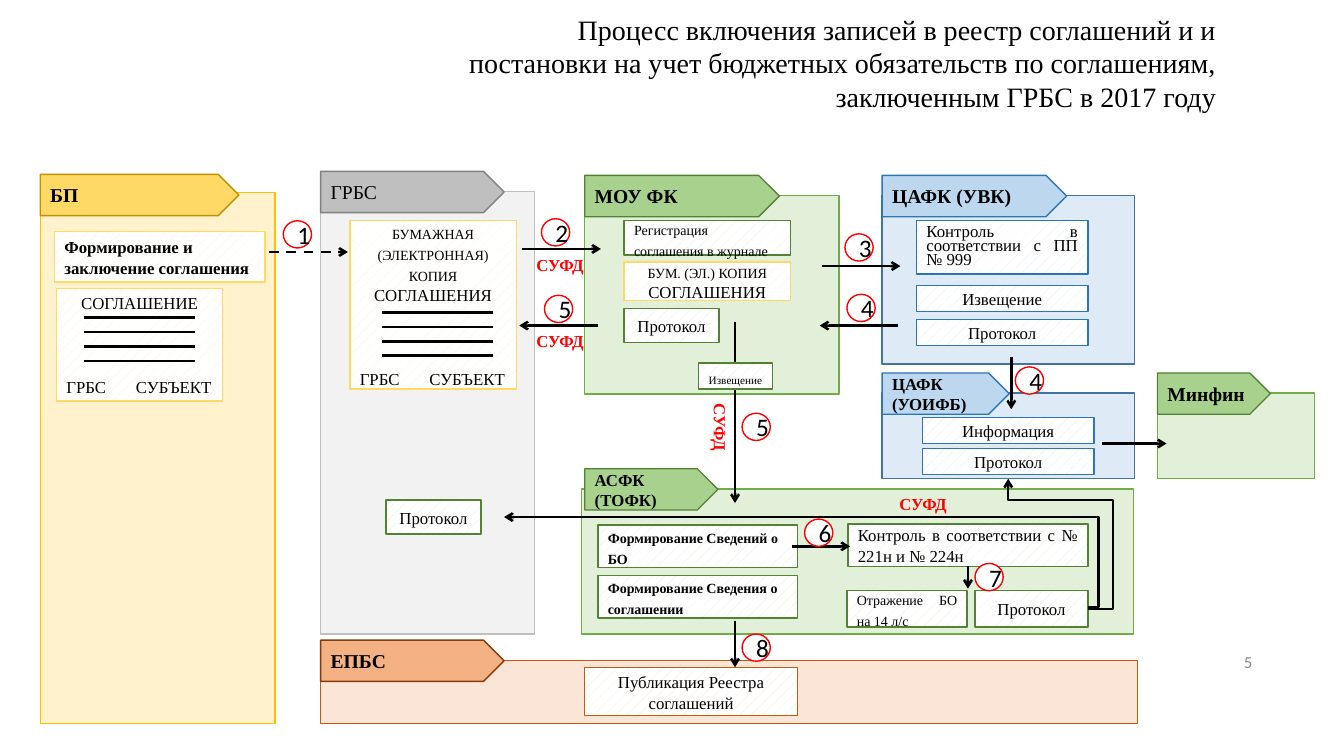
from lxml import etree
from pptx import Presentation
from pptx import util as u
from pptx.dml.color import RGBColor
from pptx.enum import dml, shapes, text
from pptx.oxml.ns import qn

SERIF = "Times New Roman"
LEFT, MID, RIGHT, FULL = (text.PP_ALIGN.LEFT, text.PP_ALIGN.CENTER,
                          text.PP_ALIGN.RIGHT, text.PP_ALIGN.JUSTIFY)
# panel fill, panel line, tag fill, tag line, card line
GOLD = "FFF2CC", "FFC000", "FFD966", "BF9000", "FFD966"
GRAY = "F2F2F2", "BFBFBF", "BFBFBF", "808080", "BFBFBF"
GREEN = "E2F0D9", "70AD47", "A9D18E", "548235", "548235"
BLUE = "DEEBF7", "43739E", "BDD7EE", "2E75B6", "2E75B6"
RUST = "FBE5D6", "C55A11", "F4B183", "843C0B", "C55A11"

prs = Presentation()
prs.slide_width, prs.slide_height = u.Inches(13.33), u.Inches(7.5)
slide = prs.slides.add_slide(prs.slide_layouts[6])


def tint(color, code):
    color.rgb = RGBColor.from_string(code)


def inch(*vals):
    return [u.Inches(v) for v in vals]


def style(para, size, align=LEFT, bold=False, color="000000", font=SERIF):
    para.alignment = align
    para.font.size, para.font.bold, para.font.name = u.Pt(size), bold, font
    tint(para.font.color, color)


def shape(kind, box, fill, line, grain=False):
    """Add an outlined shape; grain gives a dotted fill on white."""
    item = slide.shapes.add_shape(kind, *inch(*box))
    item.shadow.inherit = False
    if grain:
        item.fill.patterned()
        item.fill.pattern = dml.MSO_PATTERN.PERCENT_10
        tint(item.fill.fore_color, fill)
        tint(item.fill.back_color, "FFFFFF")
    else:
        item.fill.solid()
        tint(item.fill.fore_color, fill)
    tint(item.line.color, line)
    item.line.width = u.Pt(1)
    item.text_frame.vertical_anchor = text.MSO_ANCHOR.MIDDLE
    return item


def label(box, words, size, align, turn=0, **look):
    item = slide.shapes.add_textbox(*inch(*box))
    item.rotation = turn
    item.text_frame.word_wrap = True
    para = item.text_frame.paragraphs[0]
    para.text = words
    style(para, size, align, **look)
    return item


def panel(box, hues, name, wide, size=14, bold=True, shift=0, rise=0.2):
    """Add a region with its pentagon tag over the top left corner."""
    x, y, w, h = box
    item = shape(shapes.MSO_SHAPE.RECTANGLE, box, *hues[:2])
    tag = shape(shapes.MSO_SHAPE.PENTAGON, (x + shift, y - rise, wide, 0.41), *hues[2:4])
    para = tag.text_frame.paragraphs[0]
    para.text = name
    style(para, size, bold=bold)
    return item


def card(box, hues, *rows, align=MID, bold=False, lead=15):
    """Add a dotted card; each row is a text and its size."""
    item = shape(shapes.MSO_SHAPE.RECTANGLE, box, hues[0], hues[4], True)
    frame = item.text_frame
    for i, (words, size) in enumerate(rows):
        para = frame.add_paragraph() if i else frame.paragraphs[0]
        para.text = words
        para.line_spacing = u.Pt(lead)
        style(para, size, align, bold)
    return item


def link(x1, y1, x2, y2, arrow=True, dash=False, bends=()):
    kind = shapes.MSO_CONNECTOR.ELBOW if bends else shapes.MSO_CONNECTOR.STRAIGHT
    line = slide.shapes.add_connector(kind, *inch(x1, y1, x2, y2))
    tint(line.line.color, "000000")
    line.line.width = u.Pt(1.75)
    if dash:
        line.line.dash_style = dml.MSO_LINE.DASH
    props = line._element.spPr
    if arrow:
        etree.SubElement(props.find(qn("a:ln")), qn("a:tailEnd"), type="arrow")
    etree.SubElement(props, qn("a:effectLst"))
    if bends:
        geom = props.find(qn("a:prstGeom"))
        geom.set("prst", f"bentConnector{len(bends) + 2}")
        guides = geom.get_or_add_avLst()
        for i, bend in enumerate(bends, 1):
            etree.SubElement(guides, qn("a:gd"), name=f"adj{i}", fmla=f"val {bend}")
    return line


def sheet(box, rows, dx, dy):
    """Add a paper with four ruled lines and two signers at its foot."""
    x, y, w, h = box
    item = card(box, GOLD, *rows)
    para = item.text_frame.add_paragraph()
    para.text = "ГРБС\tСУБЪЕКТ"
    tabs = etree.SubElement(para._p.get_or_add_pPr(), qn("a:tabLst"))
    etree.SubElement(tabs, qn("a:tab"), pos=str(u.Inches(0.69)), algn="l")
    para.line_spacing, para.space_before = u.Pt(15), u.Pt(45)
    style(para, 12)
    for i in range(4):
        level = y + dy + i * 0.143
        link(x + dx, level, x + dx + 1.1, level, arrow=False)


def payee(x, y, w, h):
    panel((x, y, w, h), GOLD, "БП", 1.97, rise=0.18)
    card((x + 0.14, y + 0.39, 2.09, 0.5), GOLD,
         ("Формирование и заключение соглашения", 12), align=LEFT, bold=True)
    sheet((x + 0.16, y + 0.95, 1.65, 1.12), [("СОГЛАШЕНИЕ", 12)], 0.27, 0.29)


def chief(x, y, w, h):
    panel((x, y, w, h), GRAY, "ГРБС", 1.82, bold=False)
    sheet((x + 0.29, y + 0.29, 1.65, 1.67),
          [("БУМАЖНАЯ (ЭЛЕКТРОННАЯ) КОПИЯ", 10), ("СОГЛАШЕНИЯ", 12)], 0.32, 0.91)
    card((x + 0.65, y + 3.06, 0.94, 0.34), GREEN, ("Протокол", 12))


def mou(x, y, w, h):
    panel((x, y, w, h), GREEN, "МОУ ФК", 1.93)
    left = x + 0.39
    card((left, y + 0.25, 1.65, 0.34), GREEN,
         ("Регистрация соглашения в журнале", 10), align=LEFT)
    card((left, y + 0.66, 1.65, 0.38), GOLD, ("БУМ. (ЭЛ.) КОПИЯ", 10), ("СОГЛАШЕНИЯ", 12))
    card((left, y + 1.12, 0.94, 0.34), GREEN, ("Протокол", 12))


def uvk(x, y, w, h):
    panel((x, y, w, h), BLUE, "ЦАФК (УВК)", 1.83)
    left = x + 0.34
    card((left, y + 0.25, 1.7, 0.53), BLUE,
         ("Контроль в соответствии с ПП № 999", 12), align=FULL, lead=10)
    for i, words in enumerate(("Извещение", "Протокол")):
        card((left, y + 0.89 + i * 0.34, 1.7, 0.26), BLUE, (words, 12))


def uoifb(x, y, w, h):
    item = panel((x, y, w, h), BLUE, "ЦАФК (УОИФБ)", 1.26, 12)
    for i, words in enumerate(("Информация", "Протокол")):
        card((x + 0.4, y + 0.24 + i * 0.31, 1.7, 0.26), BLUE, (words, 12))
    return item


def asfk(x, y, w, h):
    """Return the control card and the protocol card."""
    panel((x, y, w, h), GREEN, "АСФК (ТОФК)", 1.32, 12, shift=0.03)
    for i, words in enumerate(("Формирование Сведений о БО",
                               "Формирование Сведения о соглашении")):
        card((x + 0.16, y + 0.36 + i * 0.5, 1.98, 0.42), GREEN,
             (words, 10), align=LEFT, bold=True)
    check = card((x + 2.64, y + 0.35, 2.38, 0.42), GREEN,
                 ("Контроль в соответствии с № 221н и № 224н", 12), align=FULL)
    card((x + 2.63, y + 1.01, 1.19, 0.36), GREEN,
         ("Отражение БО на 14 л/с", 10), align=FULL)
    return check, card((x + 3.9, y + 1.01, 1.12, 0.36), GREEN, ("Протокол", 12))


def epbs(x, y, w, h):
    panel((x, y, w, h), RUST, "ЕПБС", 1.82)
    card((x + 2.62, y + 0.07, 2.11, 0.48), RUST, ("Публикация Реестра соглашений", 12))


def flows(home, check, proof):
    """Add the arrows between the regions."""
    link(2.67, 2.5, 3.45, 2.5, dash=True)
    for ends in ((5.18, 2.47, 5.96, 2.47), (5.93, 3.23, 5.15, 3.23),
                 (8.15, 2.64, 8.93, 2.64), (8.91, 3.23, 8.13, 3.23),
                 (7.29, 3.19, 7.29, 4.99), (10.03, 3.54, 10.03, 4.06),
                 (10.93, 4.4, 11.57, 4.4), (7.86, 5.42, 8.43, 5.42),
                 (7.29, 6.16, 7.29, 6.62)):
        link(*ends)
    link(9.6, 5.62, 9.6, 5.84).begin_connect(check, 2)
    link(10.79, 6.02, 5, 5.13, bends=(-1800,))
    back = link(10.79, 6.04, 10, 4.75, bends=(-31700, 83600))
    back.begin_connect(proof, 3)
    back.end_connect(home, 2)


def marks():
    """Add the step numbers and the system names by the arrows."""
    for num, x, y in ((1, 2.81, 2.19), (2, 5.37, 2.17), (3, 8.38, 2.32),
                      (4, 8.4, 2.92), (4, 10.07, 3.64), (5, 5.4, 2.93),
                      (5, 7.36, 4.1), (6, 7.98, 5.15), (7, 9.67, 5.59),
                      (8, 7.36, 6.29)):
        ring = shape(shapes.MSO_SHAPE.OVAL, (x, y, 0.28, 0.27), "FFFFFF", "FF0000")
        para = ring.text_frame.paragraphs[0]
        para.text = str(num)
        style(para, 18, MID, font="Calibri")
    for x, y, turn in ((5.18, 2.48, 0), (5.18, 3.23, 0), (6.77, 4.09, 90), (8.78, 4.85, 0)):
        label((x, y, 0.75, 0.3), "СУФД", 12, MID, turn, bold=True, color="FF0000")


def main():
    label((4.23, 0.07, 7.93, 1.11),
          "Процесс включения записей в реестр соглашений и и постановки на учет "
          "бюджетных обязательств по соглашениям, заключенным ГРБС в 2017 году", 20, RIGHT)
    payee(0.4, 1.91, 2.33, 5.27)
    chief(3.18, 1.9, 2.12, 4.39)
    mou(5.8, 1.94, 2.52, 1.97)
    uvk(8.75, 1.94, 2.5, 1.67)
    home = uoifb(8.75, 3.9, 2.5, 0.85)
    panel((11.48, 3.9, 1.56, 0.85), GREEN, "Минфин", 1.12)
    check, proof = asfk(5.77, 4.85, 5.47, 1.44)
    epbs(3.18, 6.55, 8.1, 0.63)
    flows(home, check, proof)
    marks()
    card((6.93, 3.6, 0.73, 0.26), GREEN, ("Извещение", 8))
    page = label((9.52, 6.37, 3, 0.4), "5", 12, RIGHT, color="898989", font="Calibri")
    page.text_frame.vertical_anchor = text.MSO_ANCHOR.MIDDLE
    prs.save("out.pptx")


if __name__ == "__main__":
    main()
